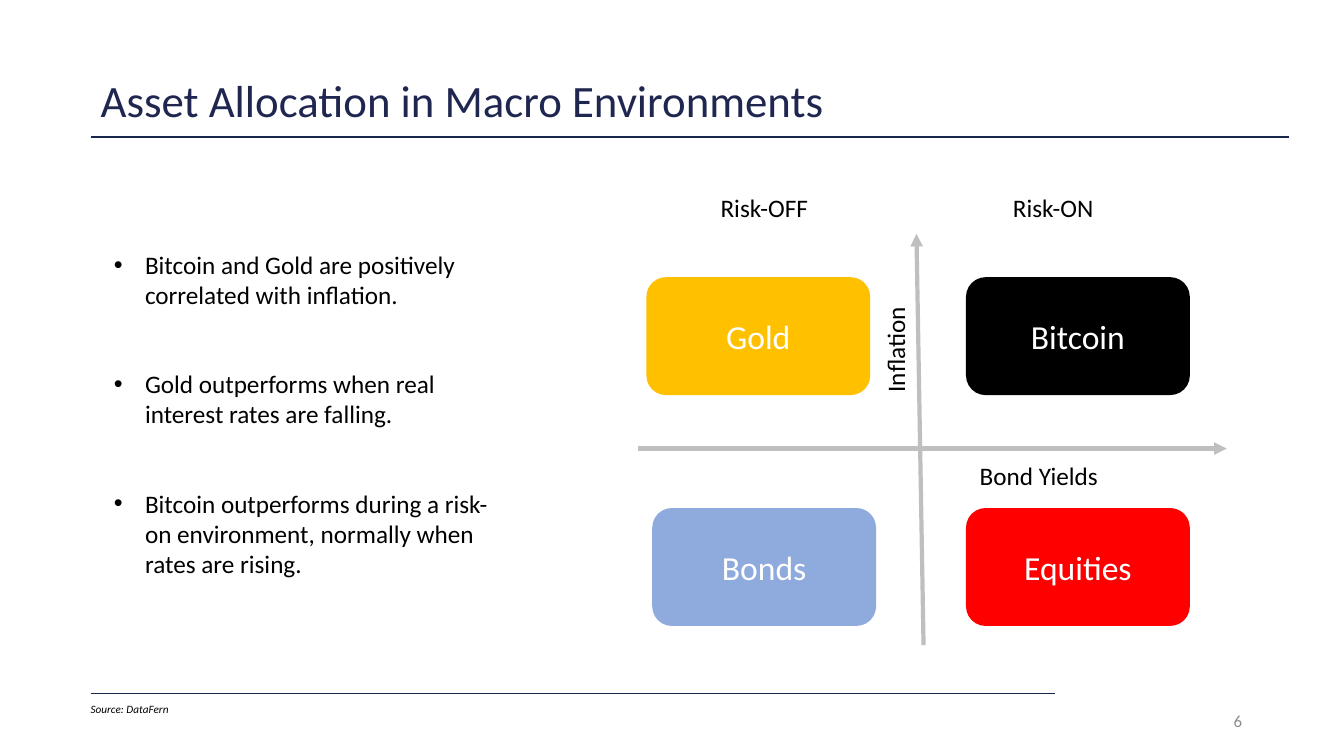
from lxml.etree import SubElement
from pptx import Presentation
from pptx.dml.color import RGBColor
from pptx.enum.shapes import MSO_CONNECTOR as Connector, MSO_SHAPE as Shape
from pptx.enum.text import MSO_ANCHOR as Anchor, PP_ALIGN as Align
from pptx.oxml.ns import qn
from pptx.util import Inches, Pt

COLUMNS, ROWS = 160, 90
presentation = Presentation()
presentation.slide_width = Inches(13.33)
presentation.slide_height = Inches(7.5)
column = presentation.slide_width / COLUMNS
row = presentation.slide_height / ROWS
slide = presentation.slides.add_slide(presentation.slide_layouts[6])


def write(text, left, top, width, height, shape=None, size=18, color="000000",
          align=Align.LEFT, anchor=Anchor.TOP, italic=False, wrap=True,
          rotation=0, spacing=1.0, bullet_gap=None):
    if shape is None:
        box = slide.shapes.add_textbox(int(left * column), int(top * row),
                                       int(width * column), int(height * row))
    else:
        box = slide.shapes.add_shape(shape, int(left * column), int(top * row),
                                     int(width * column), int(height * row))
        box.shadow.inherit = False
    box.rotation = rotation
    frame = box.text_frame
    frame.word_wrap = wrap
    frame.vertical_anchor = anchor
    for index, line in enumerate(text.split("\n")):
        paragraph = frame.paragraphs[0] if index == 0 else frame.add_paragraph()
        paragraph.alignment = align
        paragraph.line_spacing = spacing
        if bullet_gap is not None:
            if index:
                paragraph.space_before = Pt(bullet_gap)
            properties = paragraph._p.get_or_add_pPr()
            properties.set("marL", str(Inches(0.31)))
            properties.set("indent", str(-Inches(0.31)))
            SubElement(properties, qn("a:buFont"), typeface="Arial")
            SubElement(properties, qn("a:buChar"), char="•")
        run = paragraph.add_run()
        run.text = line
        run.font.name = "Calibri"
        run.font.size = Pt(size)
        run.font.italic = italic
        run.font.color.rgb = RGBColor.from_string(color)
    return box


def draw_line(start, end, color, weight, arrow=False):
    line = slide.shapes.add_connector(
        Connector.STRAIGHT, int(start[0] * column), int(start[1] * row),
        int(end[0] * column), int(end[1] * row))
    line.line.color.rgb = RGBColor.from_string(color)
    line.line.width = Pt(weight)
    if arrow:
        SubElement(line.line._get_or_add_ln(), qn("a:tailEnd"), type="triangle")
    SubElement(line._element.spPr, qn("a:effectLst"))


MARGIN = 10.8
for right, height in [(153.5, 16.32), (125.65, 82.56)]:
    draw_line((MARGIN, height), (right, height), "18264C", 1)

write("Asset Allocation in Macro Environments", MARGIN, 8.16, 138, 8.16,
      size=32, color="1F264F", anchor=Anchor.MIDDLE, spacing=0.9)

findings = [
    "Bitcoin and Gold are positively correlated with inflation.",
    "Gold outperforms when real interest rates are falling.",
    "Bitcoin outperforms during a risk-on environment, normally when rates are rising.",
]
write("\n".join(findings), 12.36, 28.92, 48.5, 40.7,
      anchor=Anchor.MIDDLE, bullet_gap=42)

write("6", 113.05, 83.4, 36, 4.8, size=12, color="8C8C8C",
      align=Align.RIGHT, anchor=Anchor.MIDDLE)
write("Source: DataFern", 9.6, 83.04, 84.5, 2.88, size=8, italic=True)

for start, end in [((109.95, 76.8), (109.1, 27.84)), ((76, 53.4), (146.05, 53.4))]:
    draw_line(start, end, "BFBFBF", 3, arrow=True)

UPPER, LOWER, RIGHT = 33, 60.48, 115
assets = [
    ("Bitcoin", RIGHT, UPPER, "000000"),
    ("Bonds", 77.65, LOWER, "8FAADC"),
    ("Equities", RIGHT, LOWER, "FF0000"),
    ("Gold", 76.95, UPPER, "FFC000"),
]
for name, left, top, color in assets:
    card = write(name, left, top, 26.65, 14.04, shape=Shape.ROUNDED_RECTANGLE,
                 size=24, color="FFFFFF", align=Align.CENTER, anchor=Anchor.MIDDLE)
    card.fill.solid()
    card.fill.fore_color.rgb = RGBColor.from_string(color)
    card.line.fill.background()

write("Inflation", 99.25, 38.16, 14.65, 4.8, rotation=270)
for label, left, top, width in [("Bond Yields", 115.45, 54.24, 16.7),
                                ("Risk-OFF", 84.6, 22.32, 13),
                                ("Risk-ON", 119.4, 22.32, 12.25)]:
    write(label, left, top, width, 4.8, wrap=False)

presentation.save("out.pptx")
